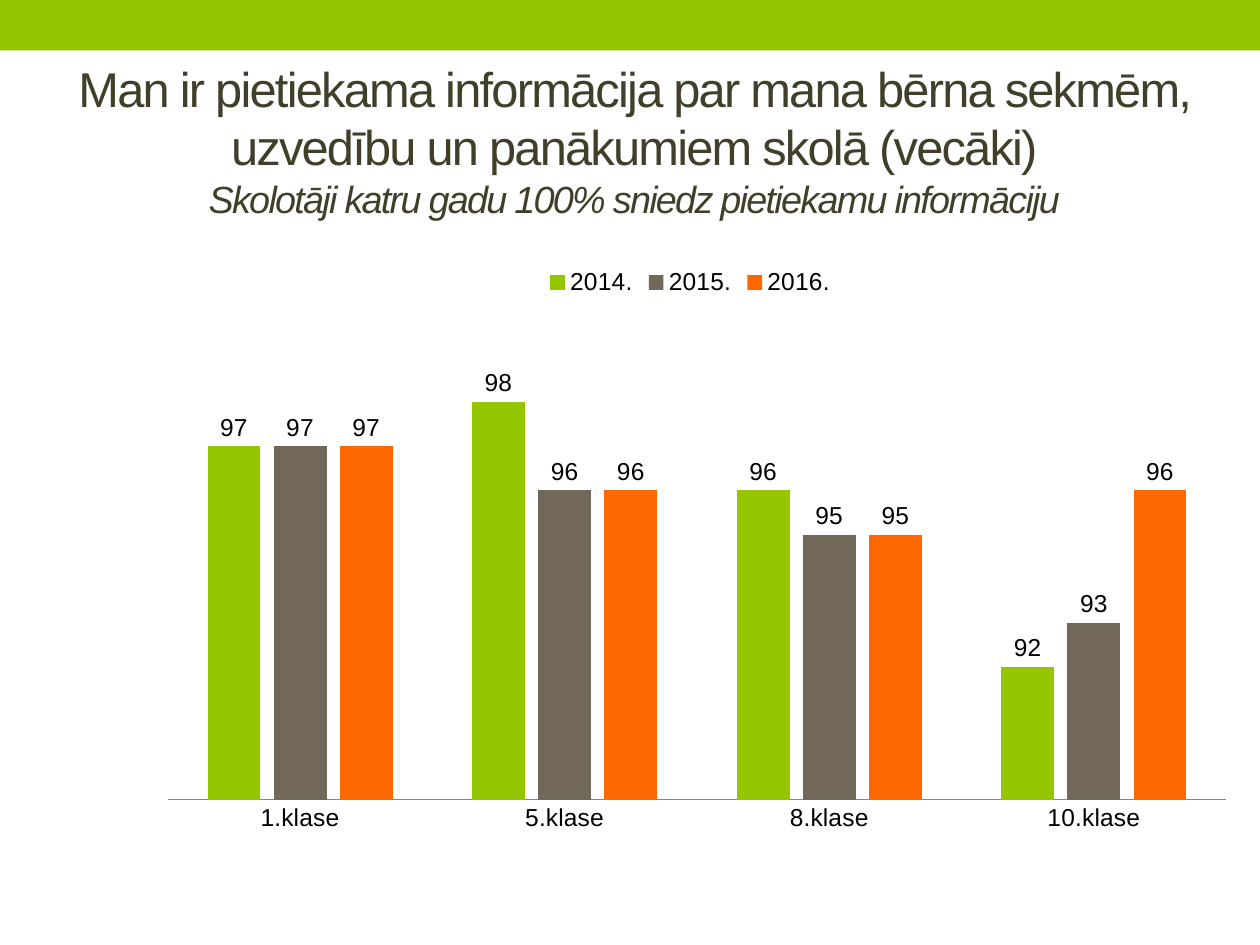
from dataclasses import dataclass

from lxml import etree
from pptx import Presentation
from pptx.chart.data import CategoryChartData
from pptx.dml.color import RGBColor
from pptx.enum.chart import XL_CHART_TYPE, XL_LABEL_POSITION, XL_LEGEND_POSITION, XL_TICK_MARK
from pptx.enum.shapes import MSO_SHAPE
from pptx.enum.text import MSO_ANCHOR, PP_ALIGN
from pptx.oxml.ns import qn
from pptx.util import Cm, Pt

COLUMNS = XL_CHART_TYPE.COLUMN_CLUSTERED
OUTER = XL_LABEL_POSITION.OUTSIDE_END
TOP = XL_LEGEND_POSITION.TOP
NO_TICK = XL_TICK_MARK.NONE
RECT = MSO_SHAPE.RECTANGLE
MIDDLE = MSO_ANCHOR.MIDDLE
CENTER = PP_ALIGN.CENTER


@dataclass(frozen=True)
class Theme:
    font: str = "Arial"
    green: str = "94C600"
    brown: str = "71685A"
    orange: str = "FF6700"
    title: str = "413F2A"
    text: str = "000000"
    axis: str = "868686"
    head: float = 27.9
    sub: float = 21.6
    label: float = 14


@dataclass(frozen=True)
class Box:
    left: float
    top: float
    width: float
    height: float

    def place(self) -> tuple:
        return Cm(self.left), Cm(self.top), Cm(self.width), Cm(self.height)


@dataclass(frozen=True)
class Series:
    year: str
    values: tuple
    color: str


THEME = Theme()
BAND = Box(0, 0, 25.4, 1.02)
TITLE = Box(0.89, 0.91, 23.8, 3.81)
CHART = Box(2.9, 5.13, 22.02, 13.74)
PLOT = {"x": 0.022, "y": 0.152, "w": 0.969, "h": 0.648}
GRADES = ("1.klase", "5.klase", "8.klase", "10.klase")
YEARS = (
    Series("2014.", (97, 98, 96, 92), THEME.green),
    Series("2015.", (97, 96, 95, 93), THEME.brown),
    Series("2016.", (97, 96, 95, 96), THEME.orange),
)


def paint(fill, color: str) -> None:
    fill.solid()
    fill.fore_color.rgb = RGBColor.from_string(color)


def style(font, size: float, color: str = THEME.text) -> None:
    font.name = THEME.font
    font.size = Pt(size)
    font.color.rgb = RGBColor.from_string(color)


def add_run(para, text: str, size: float, italic: bool = False) -> None:
    """Add a title run with letters set one point closer."""
    run = para.add_run()
    run.text = text
    style(run.font, size, THEME.title)
    run.font.bold = False
    run.font.italic = italic
    run.font._element.set("spc", "-100")


def add_band(slide) -> None:
    band = slide.shapes.add_shape(RECT, *BAND.place())
    band.shadow.inherit = False
    paint(band.fill, THEME.green)
    band.line.fill.background()


def set_title(slide) -> None:
    title = slide.shapes.title
    title.left, title.top, title.width, title.height = TITLE.place()
    frame = title.text_frame
    frame.word_wrap = True
    frame.vertical_anchor = MIDDLE
    para = frame.paragraphs[0]
    para.alignment = CENTER
    add_run(para, "Man ir pietiekama informācija par mana bērna sekmēm, "
            "uzvedību un panākumiem skolā (vecāki)", THEME.head)
    para.add_line_break()
    add_run(para, "Skolotāji katru gadu 100% sniedz pietiekamu informāciju",
            THEME.sub, italic=True)


def set_plot(chart) -> None:
    """Fix the inner plot area as shares of the chart frame."""
    area = chart._chartSpace.chart.plotArea
    for old in area.findall(qn("c:layout")):
        area.remove(old)
    layout = etree.Element(qn("c:layout"))
    area.insert(0, layout)
    manual = etree.SubElement(layout, qn("c:manualLayout"))
    parts = {"layoutTarget": "inner", "xMode": "edge", "yMode": "edge", **PLOT}
    for name, value in parts.items():
        etree.SubElement(manual, qn(f"c:{name}")).set("val", str(value))


def add_chart(slide) -> None:
    data = CategoryChartData()
    data.categories = GRADES
    for item in YEARS:
        data.add_series(item.year, item.values)
    chart = slide.shapes.add_chart(COLUMNS, *CHART.place(), data).chart
    chart.has_title = False
    style(chart.font, 10)
    set_plot(chart)

    chart.has_legend = True
    chart.legend.position = TOP
    chart.legend.include_in_layout = False
    style(chart.legend.font, THEME.label)

    axis = chart.category_axis
    axis.major_tick_mark = NO_TICK
    axis.format.line.width = Pt(0.75)
    axis.format.line.color.rgb = RGBColor.from_string(THEME.axis)
    style(axis.tick_labels.font, THEME.label)

    scale = chart.value_axis
    scale.minimum_scale, scale.maximum_scale = 89, 99
    scale.has_major_gridlines = False
    scale.visible = False

    plot = chart.plots[0]
    plot.vary_by_categories = False
    plot.gap_width, plot.overlap = 150, -25
    for series, item in zip(plot.series, YEARS):
        paint(series.format.fill, item.color)
        labels = series.data_labels
        labels.show_value = True
        labels.position = OUTER
        style(labels.font, THEME.label)


def main() -> None:
    deck = Presentation()
    deck.slide_width, deck.slide_height = Cm(25.4), Cm(19.05)
    slide = deck.slides.add_slide(deck.slide_layouts[5])
    add_band(slide)
    set_title(slide)
    add_chart(slide)
    deck.save("out.pptx")


if __name__ == "__main__":
    main()
